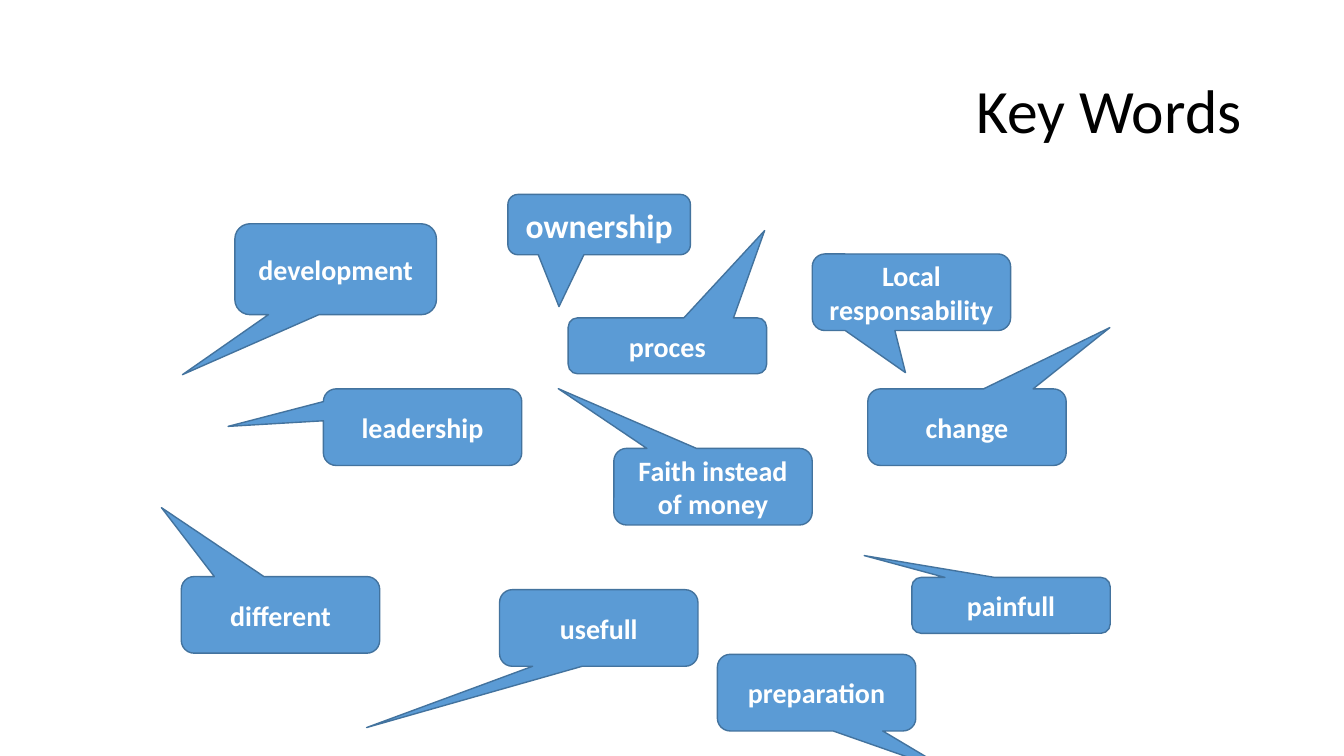
from pptx import Presentation
from pptx.dml.color import RGBColor
from pptx.enum.shapes import MSO_SHAPE
from pptx.enum.text import MSO_ANCHOR, PP_ALIGN
from pptx.util import Cm, Pt

CALLOUT = MSO_SHAPE.ROUNDED_RECTANGULAR_CALLOUT
MIDDLE = MSO_ANCHOR.MIDDLE
CENTER, RIGHT = PP_ALIGN.CENTER, PP_ALIGN.RIGHT

TITLE = "Key Words"
STANDARD, LOW = (5, 1.93), (5, 1.41)
KEY_WORDS = [
    # word, (left, top), (width, height), tail offset, type size
    ("development", (5.92, 5.64), (5.08, 2.29), (-0.76, 1.16), "word"),
    ("ownership", (12.8, 4.9), (4.6, 1.52), (-0.22, 1.36), "main_word"),
    ("Local responsability", (20.47, 6.4), STANDARD, (-0.03, 1.05), "word"),
    ("Faith instead of money", (15.47, 11.3), STANDARD, (-0.78, -1.28), "word"),
    ("leadership", (8.15, 9.8), STANDARD, (-0.98, -0.01), "word"),
    ("change", (21.87, 9.8), STANDARD, (0.72, -1.3), "word"),
    ("painfull", (22.98, 14.55), LOW, (-0.74, -0.89), "word"),
    ("usefull", (12.59, 14.86), STANDARD, (-1.17, 1.3), "word"),
    ("different", (4.57, 14.53), STANDARD, (-0.6, -1.4), "word"),
    ("proces", (14.32, 8.01), LOW, (0.49, -2.06), "word"),
    ("preparation", (18.08, 16.49), STANDARD, (0.69, 1.05), "word"),
]
THEME = {
    "font": "Calibri",
    "title": Pt(44),
    "main_word": Pt(24),
    "word": Pt(20),
    "outline_width": Pt(1),
    "title_color": RGBColor(0x00, 0x00, 0x00),
    "word_color": RGBColor(0xFF, 0xFF, 0xFF),
    "fill": RGBColor(0x5B, 0x9B, 0xD5),
    "outline": RGBColor(0x43, 0x73, 0x9E),
}


def write(holder, wording, size, color, alignment, bold=False):
    frame = holder.text_frame
    frame.word_wrap = True
    frame.vertical_anchor = MIDDLE
    line = frame.paragraphs[0]
    line.text = wording
    line.alignment = alignment
    line.font.name = THEME["font"]
    line.font.size = THEME[size]
    line.font.bold = bold
    line.font.color.rgb = THEME[color]
    return line


def add_key_word(slide, word, corner, extent, tail, size):
    bubble = slide.shapes.add_shape(CALLOUT, *map(Cm, corner + extent))
    bubble.adjustments[0], bubble.adjustments[1] = tail
    bubble.shadow.inherit = False
    bubble.fill.solid()
    bubble.fill.fore_color.rgb = THEME["fill"]
    bubble.line.color.rgb = THEME["outline"]
    bubble.line.width = THEME["outline_width"]
    write(bubble, word, size, "word_color", CENTER, bold=True)


def main():
    deck = Presentation()
    deck.slide_width, deck.slide_height = Cm(33.87), Cm(19.05)
    slide = deck.slides.add_slide(deck.slide_layouts[6])
    heading = slide.shapes.add_textbox(Cm(2.33), Cm(1.01), Cm(29.21), Cm(3.68))
    write(heading, TITLE, "title", "title_color", RIGHT).line_spacing = 0.9
    for key_word in KEY_WORDS:
        add_key_word(slide, *key_word)
    deck.save("out.pptx")


if __name__ == "__main__":
    main()
